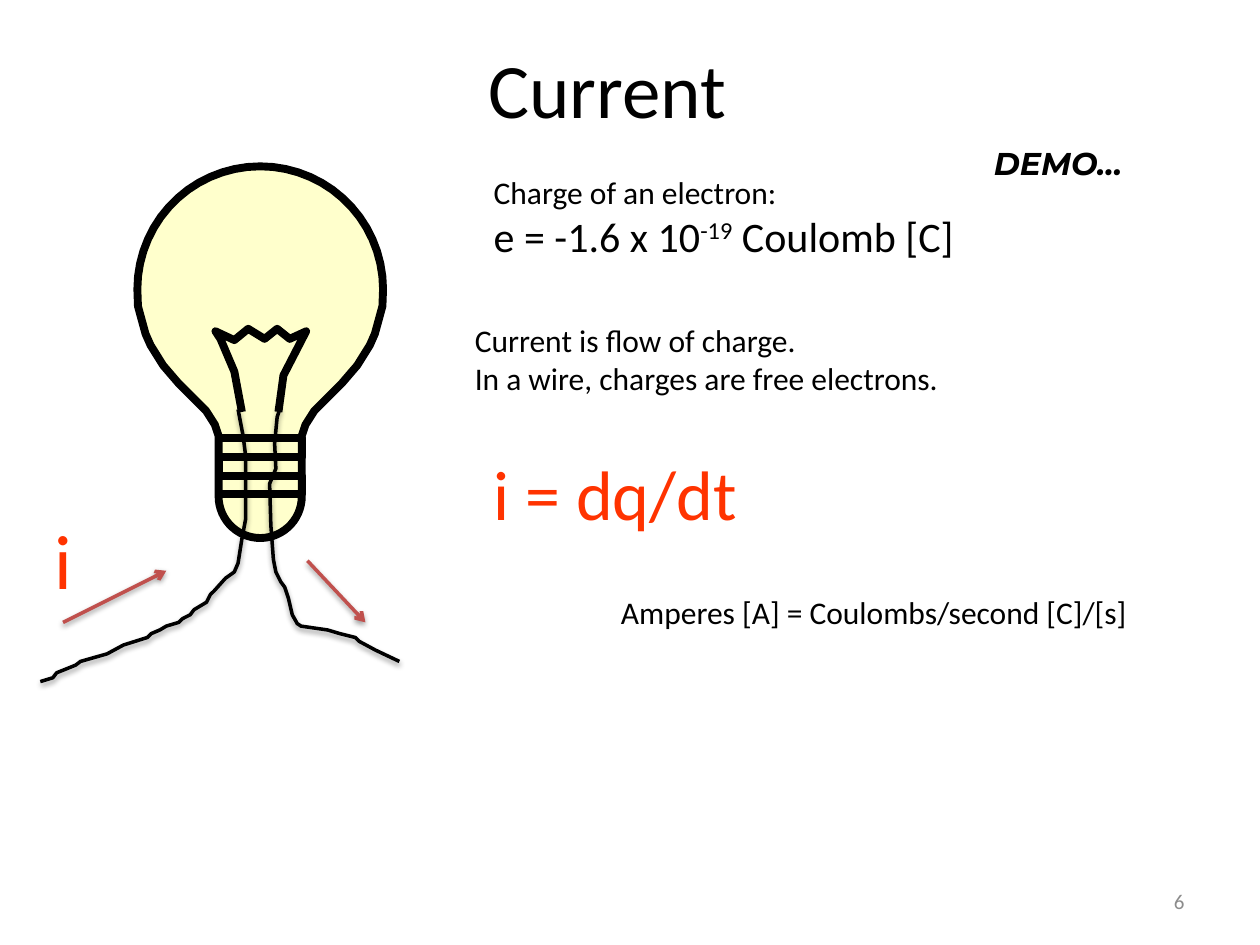
import math
from dataclasses import dataclass

import pptx
import pptx.dml.color
import pptx.enum.shapes
import pptx.enum.text
import pptx.oxml
import pptx.oxml.ns
import pptx.util

ALIGN = pptx.enum.text.PP_ALIGN
ANCHOR = pptx.enum.text.MSO_ANCHOR
COLS, ROWS = 100, 75  # slide grid
CELL = pptx.util.Inches(0.1)


@dataclass(frozen=True)
class Theme:
    font: str = "Calibri"
    accent_font: str = "Montserrat"
    ink: str = "000000"
    current: str = "FF3300"
    arrow: str = "C0504D"
    glass: str = "FFFFCC"
    muted: str = "8C8C8C"
    title: int = 44
    formula: int = 40
    value: int = 24
    body: int = 18
    small: int = 12
    bulb_line: float = 4.5
    wire_line: float = 2


@dataclass(frozen=True)
class Box:
    """Columns and rows of the slide grid."""
    x: float
    y: float
    w: float
    h: float

    def inner(self, x, y, w, h):
        return Box(self.x + x, self.y + y, w, h)

    def place(self, x, y):
        return round((self.x + x) * CELL), round((self.y + y) * CELL)

    def emu(self):
        return [round(v * CELL) for v in (self.x, self.y, self.w, self.h)]


T = Theme()


def rgb(value):
    return pptx.dml.color.RGBColor.from_string(value)


def add_text(slide, box, lines, color=T.ink, font=T.font, align=ALIGN.LEFT,
             anchor=ANCHOR.TOP, wrap=True, grow=False, accent=False):
    """Each line is a list of runs: (text, size) or (text, size, baseline)."""
    sp = slide.shapes.add_textbox(*box.emu())
    tf = sp.text_frame
    tf.word_wrap = wrap
    tf.vertical_anchor = anchor
    if grow:
        tf.auto_size = pptx.enum.text.MSO_AUTO_SIZE.SHAPE_TO_FIT_TEXT
    for i, runs in enumerate(lines):
        p = tf.paragraphs[0] if i == 0 else tf.add_paragraph()
        p.alignment = align
        for text, size, *baseline in runs:
            r = p.add_run()
            r.text = text
            r.font.name = font
            r.font.size = pptx.util.Pt(size)
            r.font.color.rgb = rgb(color)
            if accent:
                r.font.bold = r.font.italic = True
            if baseline:
                r._r.get_or_add_rPr().set("baseline", str(baseline[0] * 1000))


def set_line(sp, color, width):
    sp.line.color.rgb = rgb(color)
    sp.line.width = pptx.util.Pt(width)


def add_shadow(sp):
    sp._element.spPr.append(pptx.oxml.parse_xml(
        f'<a:effectLst {pptx.oxml.ns.nsdecls("a")}>'
        '<a:outerShdw blurRad="40000" dist="20000" dir="5400000" rotWithShape="0">'
        '<a:srgbClr val="000000"><a:alpha val="38000"/></a:srgbClr>'
        '</a:outerShdw></a:effectLst>'))


def add_path(slide, box, contours, width, fill=None, shadow=False):
    """Draw point lists given relative to the box; a filled path is closed."""
    fb = None
    for contour in contours:
        first, *rest = [box.place(*pt) for pt in contour]
        if fb is None:
            fb = slide.shapes.build_freeform(*first, scale=1.0)
        else:
            fb.move_to(*first)
        fb.add_line_segments(rest, close=fill is not None)
    sp = fb.convert_to_shape()
    set_line(sp, T.ink, width)
    if fill:
        sp.fill.solid()
        sp.fill.fore_color.rgb = rgb(fill)
    else:
        sp.fill.background()
    if shadow:
        add_shadow(sp)
    else:
        sp.shadow.inherit = False


def add_arrow(slide, box, start, end):
    c = slide.shapes.add_connector(pptx.enum.shapes.MSO_CONNECTOR.STRAIGHT,
                                   *box.place(*start), *box.place(*end))
    set_line(c, T.arrow, T.wire_line)
    c._element.spPr.find(pptx.oxml.ns.qn("a:ln")).append(pptx.oxml.parse_xml(
        f'<a:tailEnd {pptx.oxml.ns.nsdecls("a")} type="arrow"/>'))
    add_shadow(c)


def arc(radius, center_y, start, stop):
    """Points around the bulb axis; 0 degrees is right, 90 is down."""
    step = 6 if stop > start else -6
    return [(radius * math.cos(math.radians(a)),
             center_y + radius * math.sin(math.radians(a)))
            for a in range(start, stop + step, step)]


def draw_bulb(slide, box):
    mid, cap = box.w / 2, 3.3
    # Glass: round head, tapering neck and round base, mirrored on the axis
    neck = [(9.7, 11.1), (9.4, 12.2), (9.1, 13.3), (8.7, 14.2), (7.7, 15.8),
            (6.5, 17.2), (4.3, 19.4), (3.6, 20.5), (cap, 21.4)]
    half = arc(9.75, 9.75, -90, 0) + neck + arc(cap, 26.2, 0, 90)
    outline = ([(mid + x, y) for x, y in half]
               + [(mid - x, y) for x, y in reversed(half[1:-1])])
    add_path(slide, box, [outline], T.bulb_line, fill=T.glass)

    # Filament and screw thread
    filament = [(8.3, 19.5), (7.7, 16.3), (6.6, 13.7), (6.2, 13.1), (7.7, 13.8),
                (8.8, 12.9), (10.1, 13.7), (11.1, 12.9), (12.1, 13.7),
                (13.4, 13.1), (11.6, 16.6), (11.2, 19.5)]
    thread = []
    for i in range(4):
        side = cap if i % 2 else -cap
        y = 21.6 + 1.48 * i
        thread += [(mid + side, y), (mid - side, y)]
    add_path(slide, box, [filament, thread], T.bulb_line)


def draw_circuit(slide, box):
    draw_bulb(slide, box.inner(7.7, 0, 19.5, 29.5))

    # Wires
    left = [(15.7, 19.3), (16.1, 21.4), (16.3, 23), (16.3, 28), (16, 29.6),
            (15.7, 31.5), (15.4, 32.2), (14.7, 32.7), (13.8, 33.7), (13.5, 34),
            (13.2, 34.6), (12.2, 35.2), (11.9, 35.6), (11.3, 35.9), (11, 36.2),
            (10, 36.5), (9.5, 36.8), (8.8, 37.1), (8.5, 37.4), (6.6, 38),
            (5.3, 38.7), (3.2, 39.3), (2.8, 39.6), (1.3, 40.2), (1, 40.6), (0, 40.9)]
    right = [(18.8, 19), (19, 19.3), (18.8, 19.9), (18.6, 22), (18.7, 24),
             (18.2, 25.2), (18.3, 28.5), (18.5, 31.2), (18.7, 32.2), (19.1, 33),
             (19.4, 33.4), (19.7, 34.3), (20, 35.6), (20.4, 36.3), (20.7, 36.5),
             (22.8, 36.8), (23.8, 37.1), (25, 37.4), (25.3, 37.7), (26.6, 38.4),
             (28.5, 39.3)]
    for wire in (left, right):
        add_path(slide, box, [wire], T.wire_line, shadow=True)

    # Direction of current
    add_arrow(slide, box, (1.8, 36.2), (10, 32.1))
    add_text(slide, box.inner(-4.4, 26.1, 12.5, 10.1), [[("i", T.title)]],
             T.current, align=ALIGN.CENTER, anchor=ANCHOR.MIDDLE)
    add_arrow(slide, box, (21.2, 31.3), (25.8, 36.2))


def draw_notes(slide, box):
    add_text(slide, box.inner(0, 11.8, 39.7, 7.1),
             [[("Current is flow of charge.", T.body)],
              [("In a wire, charges are free electrons.", T.body)]], grow=True)
    add_text(slide, box.inner(1.5, 0, 39.7, 8.1),
             [[("Charge of an electron:", T.body)],
              [("e = -1.6 x 10", T.value), ("-19", T.value, 30),
               (" Coulomb [C]", T.value)]], grow=True)
    add_text(slide, box.inner(1.5, 22.1, 21.5, 7.7), [[("i = dq/dt", T.formula)]],
             T.current, wrap=False, grow=True)
    add_text(slide, box.inner(11.6, 33.4, 43.2, 4),
             [[("Amperes [A] = Coulombs/second [C]/[s]", T.body)]],
             wrap=False, grow=True)


def draw_frame(slide, box):
    # Title, slide number and demo cue
    add_text(slide, box.inner(3.2, 0.7, 90, 12.5), [[("Current", T.title)]],
             align=ALIGN.CENTER, anchor=ANCHOR.MIDDLE)
    add_text(slide, box.inner(71.7, 69.5, 23.3, 4), [[("6", T.small)]], T.muted,
             align=ALIGN.RIGHT, anchor=ANCHOR.MIDDLE)
    add_text(slide, box.inner(77.9, 10.9, 12.8, 4), [[("DEMO…", T.body)]],
             font=T.accent_font, wrap=False, grow=True, accent=True)


def main():
    prs = pptx.Presentation()
    prs.slide_width, prs.slide_height = COLS * CELL, ROWS * CELL
    slide = prs.slides.add_slide(prs.slide_layouts[6])
    draw_frame(slide, Box(0, 0, COLS, ROWS))
    draw_circuit(slide, Box(3.2, 13.2, 28.5, 41))
    draw_notes(slide, Box(36.7, 13.2, 55, 38))
    prs.save("out.pptx")


if __name__ == "__main__":
    main()
